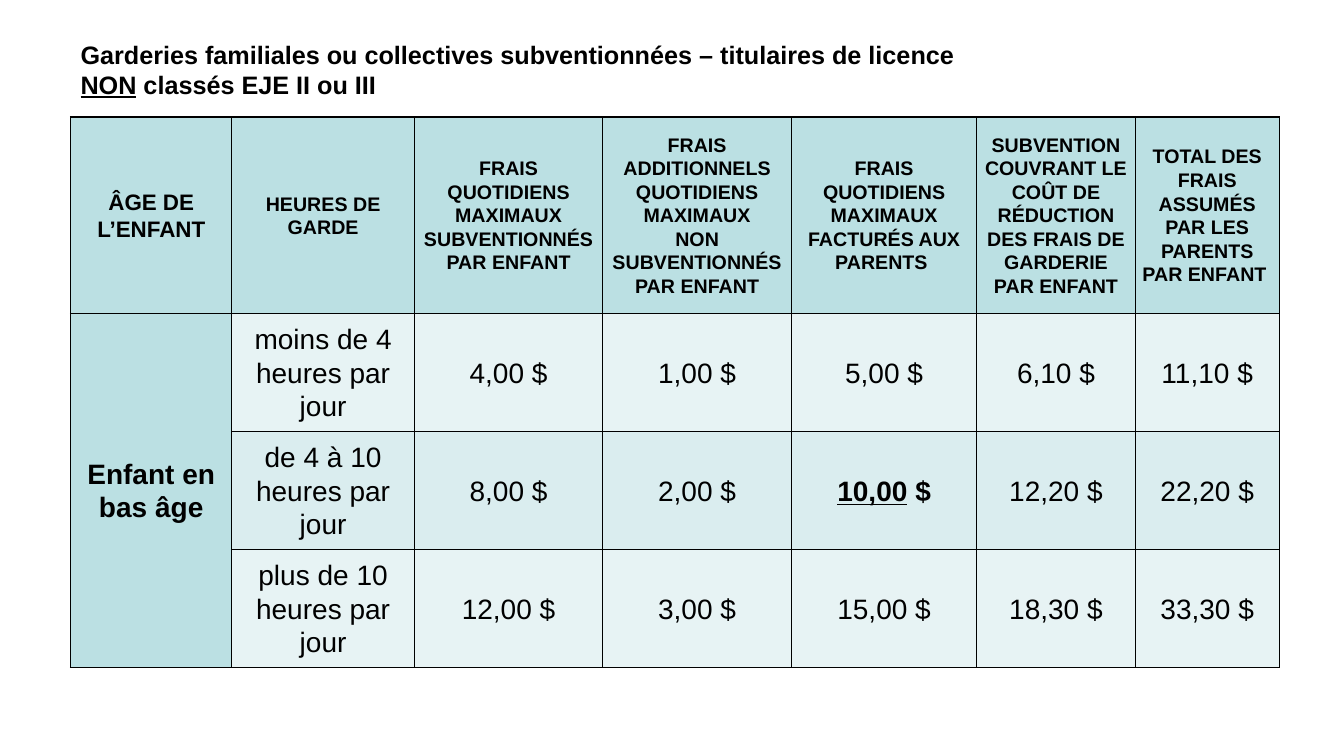
import dataclasses

import lxml.etree
import pptx
import pptx.dml.color
import pptx.enum.text
import pptx.oxml.ns
import pptx.table
import pptx.text.text
import pptx.util

COLORS = {
    "ink": "000000",
    "heading": "BBE0E3",
    "light_row": "E7F3F4",
    "dark_row": "DAEDEF",
}


@dataclasses.dataclass(frozen=True)
class Words:
    text: str
    underline: bool = False


@dataclasses.dataclass(frozen=True)
class Entry:
    words: tuple[Words, ...]
    size: int = 20
    bold: bool = False
    fill: str = "heading"


def heading(text: str, size: int = 14) -> Entry:
    return Entry((Words(text),), size, True)


def rgb(name: str) -> pptx.dml.color.RGBColor:
    return pptx.dml.color.RGBColor.from_string(COLORS[name])


def apply(target: object, settings: dict[str, object]) -> None:
    for name, value in settings.items():
        setattr(target, name, value)


def write(paragraph: pptx.text.text._Paragraph, entry: Entry) -> None:
    for words in entry.words:
        for number, line in enumerate(words.text.split("\n")):
            if number:
                paragraph.add_line_break()
            run = paragraph.add_run()
            run.text = line
            apply(run.font, {
                "name": "Arial",
                "size": pptx.util.Pt(entry.size),
                "bold": entry.bold,
                "underline": words.underline,
            })
            run.font.color.rgb = rgb("ink")


def outline(cell: pptx.table._Cell) -> None:
    properties = cell._tc.get_or_add_tcPr()
    qn = pptx.oxml.ns.qn
    for position, side in enumerate(("lnL", "lnR", "lnT", "lnB")):
        border = lxml.etree.Element(qn(f"a:{side}"), w=str(pptx.util.Pt(1)))
        paint = lxml.etree.SubElement(border, qn("a:solidFill"))
        lxml.etree.SubElement(paint, qn("a:srgbClr"), val=COLORS["ink"])
        properties.insert(position, border)


def fill_cell(cell: pptx.table._Cell, entry: Entry) -> None:
    apply(cell, {
        "margin_left": pptx.util.Inches(0.05),
        "margin_right": pptx.util.Inches(0.05),
        "margin_top": 0,
        "margin_bottom": 0,
        "vertical_anchor": pptx.enum.text.MSO_ANCHOR.MIDDLE,
    })
    cell.fill.solid()
    cell.fill.fore_color.rgb = rgb(entry.fill)
    outline(cell)
    paragraph = cell.text_frame.paragraphs[0]
    apply(paragraph, {
        "alignment": pptx.enum.text.PP_ALIGN.CENTER,
        "line_spacing": 1.07,
    })
    write(paragraph, entry)


TITLE = Entry((
    Words("Garderies familiales ou collectives subventionnées – titulaires de licence "),
    Words("NON", True),
    Words(" classés EJE II ou III"),
), 18, True)

HEADINGS = [
    heading("ÂGE DE L’ENFANT", 16),
    heading("HEURES DE GARDE"),
    heading("FRAIS QUOTIDIENS MAXIMAUX SUBVENTIONNÉS PAR ENFANT"),
    heading("FRAIS ADDITIONNELS\nQUOTIDIENS MAXIMAUX\nNON SUBVENTIONNÉS PAR ENFANT"),
    heading("FRAIS QUOTIDIENS MAXIMAUX FACTURÉS AUX PARENTS "),
    heading("SUBVENTION COUVRANT LE COÛT DE RÉDUCTION DES FRAIS DE GARDERIE PAR ENFANT"),
    heading("TOTAL DES FRAIS ASSUMÉS PAR LES PARENTS PAR ENFANT "),
]
AGE_GROUP = heading("Enfant en bas âge", 20)
FEES = [
    ("moins de 4 heures par jour", "4,00 $", "1,00 $", "5,00 $", "6,10 $", "11,10 $"),
    ("de 4 à 10 heures par jour", "8,00 $", "2,00 $", "10,00 $", "12,20 $", "22,20 $"),
    ("plus de 10 heures par jour", "12,00 $", "3,00 $", "15,00 $", "18,30 $", "33,30 $"),
]
HIGHLIGHTED_FEE = "10,00 $"
COLUMN_WIDTHS = [1.6, 1.81, 1.87, 1.87, 1.84, 1.57, 1.43]
ROW_HEIGHTS = [1.95] + [1.17] * len(FEES)


def fee_entry(text: str, fill: str) -> Entry:
    if text == HIGHLIGHTED_FEE:
        return Entry((Words(text[:-2], True), Words(text[-2:])), bold=True, fill=fill)
    return Entry((Words(text),), fill=fill)


def main() -> None:
    inches = pptx.util.Inches
    presentation = pptx.Presentation()
    apply(presentation, {"slide_width": inches(13.33), "slide_height": inches(7.5)})
    slide = presentation.slides.add_slide(presentation.slide_layouts[6])

    title = slide.shapes.add_textbox(inches(0.7), inches(0.33), inches(9.41), inches(0.71))
    apply(title.text_frame, {
        "word_wrap": True,
        "vertical_anchor": pptx.enum.text.MSO_ANCHOR.MIDDLE,
        "auto_size": pptx.enum.text.MSO_AUTO_SIZE.SHAPE_TO_FIT_TEXT,
    })
    write(title.text_frame.paragraphs[0], TITLE)

    fees = slide.shapes.add_table(
        len(ROW_HEIGHTS), len(COLUMN_WIDTHS), inches(0.7), inches(1.16),
        inches(sum(COLUMN_WIDTHS)), inches(sum(ROW_HEIGHTS)),
    ).table
    apply(fees, {"first_row": False, "horz_banding": False})
    for column, width in zip(fees.columns, COLUMN_WIDTHS):
        column.width = inches(width)
    for row, height in zip(fees.rows, ROW_HEIGHTS):
        row.height = inches(height)

    fees.cell(1, 0).merge(fees.cell(len(FEES), 0))
    for column, entry in enumerate(HEADINGS):
        fill_cell(fees.cell(0, column), entry)
    for row, texts in enumerate(FEES, start=1):
        fill = "light_row" if row % 2 else "dark_row"
        fill_cell(fees.cell(row, 0), AGE_GROUP if row == 1 else Entry(()))
        for column, text in enumerate(texts, start=1):
            fill_cell(fees.cell(row, column), fee_entry(text, fill))

    presentation.save("out.pptx")


if __name__ == "__main__":
    main()
